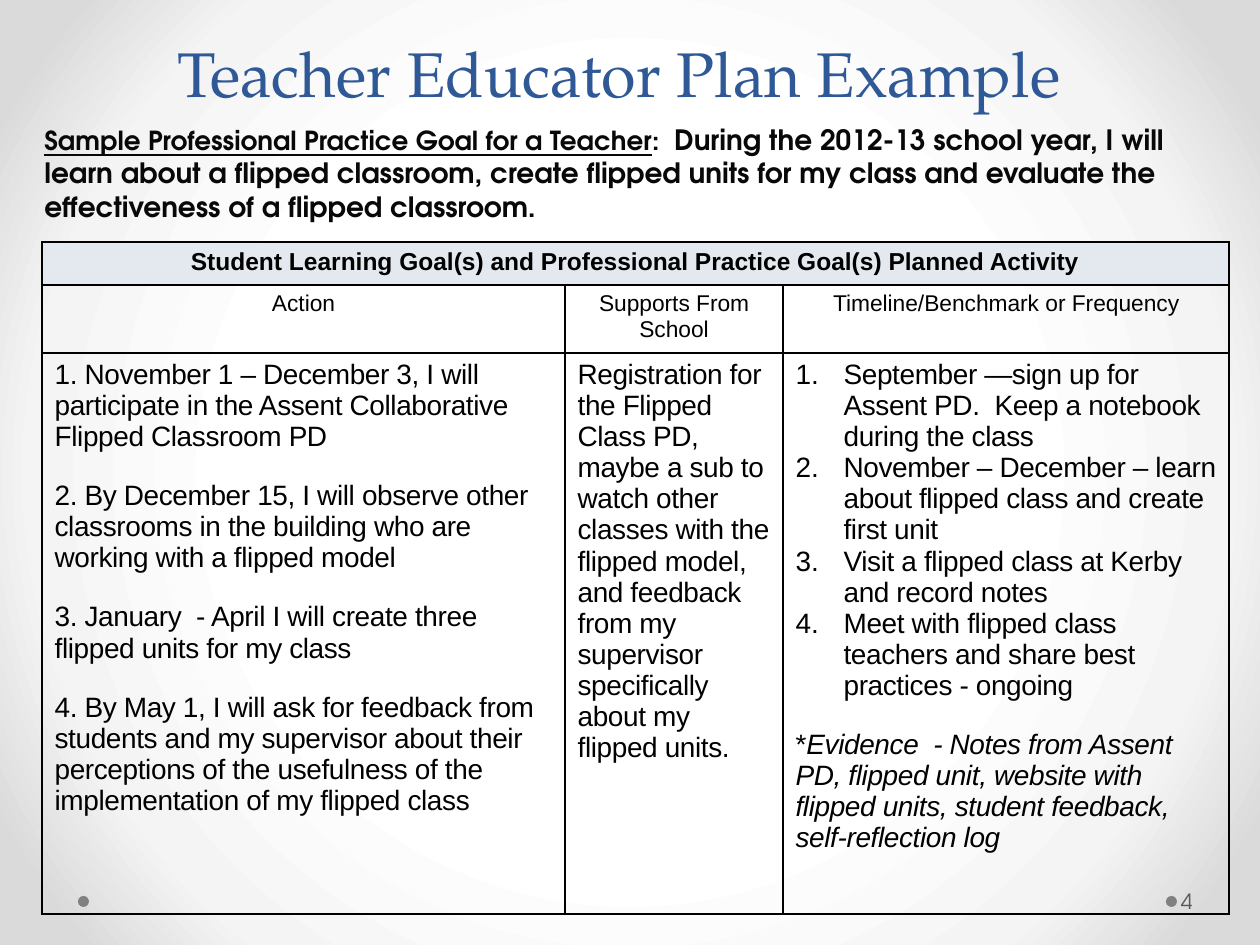
import pptx
import pptx.dml.color
import pptx.enum.shapes
import pptx.enum.text
import pptx.oxml
import pptx.oxml.ns
import pptx.util

RGBColor = pptx.dml.color.RGBColor
ALIGN = pptx.enum.text.PP_ALIGN
ANCHOR = pptx.enum.text.MSO_ANCHOR

EMU_PER_PX = 914400 / 126
TITLE_BLUE = RGBColor(0x2F, 0x58, 0x97)
GOAL_INK = RGBColor(0x08, 0x08, 0x08)
NUMBER_GRAY = RGBColor(0x59, 0x59, 0x59)
DOT_GRAY = RGBColor(0x80, 0x80, 0x80)
BLACK = RGBColor(0, 0, 0)
BANNER_FILL = RGBColor(0xE4, 0xE9, 0xEF)
BACKGROUND_STOPS = [(50, "FFFFFF"), (76, "F4F4F4"), (92, "DADADA")]

TITLE_FONT = "TeX Gyre Pagella"
BODY_FONT = "TeX Gyre Adventor"
TABLE_FONT = "Arial"
LIST_INDENT = 48

ACTIONS = [
    "1. November 1 – December 3, I will participate in the Assent Collaborative Flipped Classroom PD",
    "2. By December 15, I will observe other classrooms in the building who are working with a flipped model",
    "3. January  - April I will create three flipped units for my class",
    "4. By May 1, I will ask for feedback from students and my supervisor about their perceptions "
    "of the usefulness of the implementation of my flipped class",
]
SUPPORT = ("Registration for the Flipped Class PD, maybe a sub to watch other classes with the flipped "
           "model, and feedback from my supervisor specifically about my flipped units.")
TIMELINE = [
    "September —sign up for Assent PD.  Keep a notebook during the class",
    "November – December – learn about flipped class and create first unit",
    "Visit a flipped class at Kerby and record notes",
    "Meet with flipped class teachers and share best practices - ongoing",
]
EVIDENCE = ("Evidence  - Notes from Assent PD, flipped unit, website with flipped units, "
            "student feedback, self-reflection log")


def px(length):
    return pptx.util.Emu(round(length * EMU_PER_PX))


def add_text(paragraph, text, font=TABLE_FONT, size=16, color=BLACK, bold=False,
             italic=False, underline=False, spacing=0, align=ALIGN.LEFT, before=0):
    paragraph.alignment = align
    paragraph.space_before = pptx.util.Pt(before)
    run = paragraph.add_run()
    run.text = text
    run.font.name = font
    run.font.size = pptx.util.Pt(size)
    run.font.color.rgb = color
    run.font.bold = bold
    run.font.italic = italic
    run.font.underline = underline
    if spacing:
        run.font._element.set("spc", str(round(spacing * 100)))


def next_paragraph(frame):
    first = frame.paragraphs[0]
    return frame.add_paragraph() if first.runs else first


def number_paragraph(paragraph):
    properties = paragraph._p.get_or_add_pPr()
    properties.set("marL", str(px(LIST_INDENT)))
    properties.set("indent", str(-px(LIST_INDENT)))
    numbering = pptx.oxml.parse_xml(
        f'<a:buAutoNum {pptx.oxml.ns.nsdecls("a")} type="arabicPeriod"/>')
    properties.append(numbering)


class SlideBuilder:
    def __init__(self, presentation):
        self.slide = presentation.slides.add_slide(presentation.slide_layouts[5])

    def background(self, stops):
        properties = self.slide.background.fill
        properties.gradient()
        old = self.slide._element.find(".//" + pptx.oxml.ns.qn("a:gradFill"))
        stop_xml = "".join(f'<a:gs pos="{position * 1000}"><a:srgbClr val="{color}"/></a:gs>'
                           for position, color in stops)
        gradient = pptx.oxml.parse_xml(
            f'<a:gradFill {pptx.oxml.ns.nsdecls("a")} rotWithShape="1"><a:gsLst>{stop_xml}</a:gsLst>'
            '<a:path path="circle"><a:fillToRect l="50000" t="50000" r="50000" b="50000"/></a:path>'
            '</a:gradFill>')
        old.getparent().replace(old, gradient)

    def title(self, text, left, top, width, height):
        shape = self.slide.shapes.title
        shape.left, shape.top, shape.width, shape.height = map(px, (left, top, width, height))
        frame = shape.text_frame
        frame.auto_size = pptx.enum.text.MSO_AUTO_SIZE.NONE
        frame.vertical_anchor = ANCHOR.BOTTOM
        paragraph = frame.paragraphs[0]
        paragraph.line_spacing = pptx.util.Pt(58)
        add_text(paragraph, text, font=TITLE_FONT, size=36, color=TITLE_BLUE, align=ALIGN.CENTER)

    def dot(self, left, top, size):
        shape = self.slide.shapes.add_shape(
            pptx.enum.shapes.MSO_SHAPE.OVAL, px(left), px(top), px(size), px(size))
        shape.shadow.inherit = False
        shape.fill.solid()
        shape.fill.fore_color.rgb = DOT_GRAY
        shape.line.fill.background()

    def text_box(self, left, top, width, height, anchor=ANCHOR.TOP):
        frame = self.slide.shapes.add_textbox(px(left), px(top), px(width), px(height)).text_frame
        frame.word_wrap = True
        frame.vertical_anchor = anchor
        return frame

    def table(self, left, top, columns, rows):
        table = self.slide.shapes.add_table(
            len(rows), len(columns), px(left), px(top), px(sum(columns)), px(sum(rows))).table
        table.first_row = table.horz_banding = False
        for column, width in zip(table.columns, columns):
            column.width = px(width)
        for row, height in zip(table.rows, rows):
            row.height = px(height)
        for cell in table.iter_cells():
            self.border(cell)
            cell.fill.background()
        return table

    def border(self, cell):
        properties = cell._tc.get_or_add_tcPr()
        for side in ("lnL", "lnR", "lnT", "lnB"):
            properties.append(pptx.oxml.parse_xml(
                f'<a:{side} {pptx.oxml.ns.nsdecls("a")} w="12700"><a:solidFill>'
                f'<a:srgbClr val="{BLACK}"/></a:solidFill></a:{side}>'))


def main():
    presentation = pptx.Presentation()
    presentation.slide_width, presentation.slide_height = px(1260), px(945)
    builder = SlideBuilder(presentation)
    builder.background(BACKGROUND_STOPS)

    # Footer dots and heading
    for left in (1166, 78):
        builder.dot(left, 896, 11)
    builder.title("Teacher Educator Plan Example", 73, 21, 1092, 95)

    # Practice goal
    goal = builder.text_box(32, 116, 1197, 189).paragraphs[0]
    goal_style = dict(font=BODY_FONT, color=GOAL_INK, bold=True)
    add_text(goal, "Sample Professional Practice Goal for a Teacher", size=15, underline=True, **goal_style)
    add_text(goal, ":  ", size=15, **goal_style)
    add_text(goal, "During the 2012-13 school year, I will learn about a flipped classroom, create flipped "
             "units for my class and evaluate the effectiveness of a flipped classroom.", **goal_style)

    # Slide number
    number = builder.text_box(1177, 876, 77, 50, ANCHOR.MIDDLE)
    number.margin_left = px(4)
    add_text(number.paragraphs[0], "4", font=BODY_FONT, size=12, color=NUMBER_GRAY)

    # Plan table: banner and column heads
    table = builder.table(42, 242, columns=[523, 218, 446], rows=[43, 68, 561])
    banner = table.cell(0, 0)
    banner.merge(table.cell(0, 2))
    banner.fill.solid()
    banner.fill.fore_color.rgb = BANNER_FILL
    add_text(banner.text_frame.paragraphs[0],
             "Student Learning Goal(s) and Professional Practice Goal(s) Planned Activity",
             size=14, bold=True, align=ALIGN.CENTER)
    heads = ["Action", "Supports From School", "Timeline/Benchmark or Frequency"]
    for column, head in enumerate(heads):
        add_text(table.cell(1, column).text_frame.paragraphs[0], head, size=13, align=ALIGN.CENTER)

    # Plan table: contents
    actions, support, timeline = (table.cell(2, column).text_frame for column in range(3))
    for index, action in enumerate(ACTIONS):
        add_text(next_paragraph(actions), action, spacing=-0.2, before=16 if index else 0)
    add_text(support.paragraphs[0], SUPPORT, spacing=-0.2)
    for step in TIMELINE:
        paragraph = next_paragraph(timeline)
        add_text(paragraph, step, spacing=-0.2)
        number_paragraph(paragraph)
    evidence = next_paragraph(timeline)
    add_text(evidence, "*", spacing=-0.2, before=16)
    add_text(evidence, EVIDENCE, italic=True, spacing=-0.2, before=16)

    presentation.save("out.pptx")


if __name__ == "__main__":
    main()
